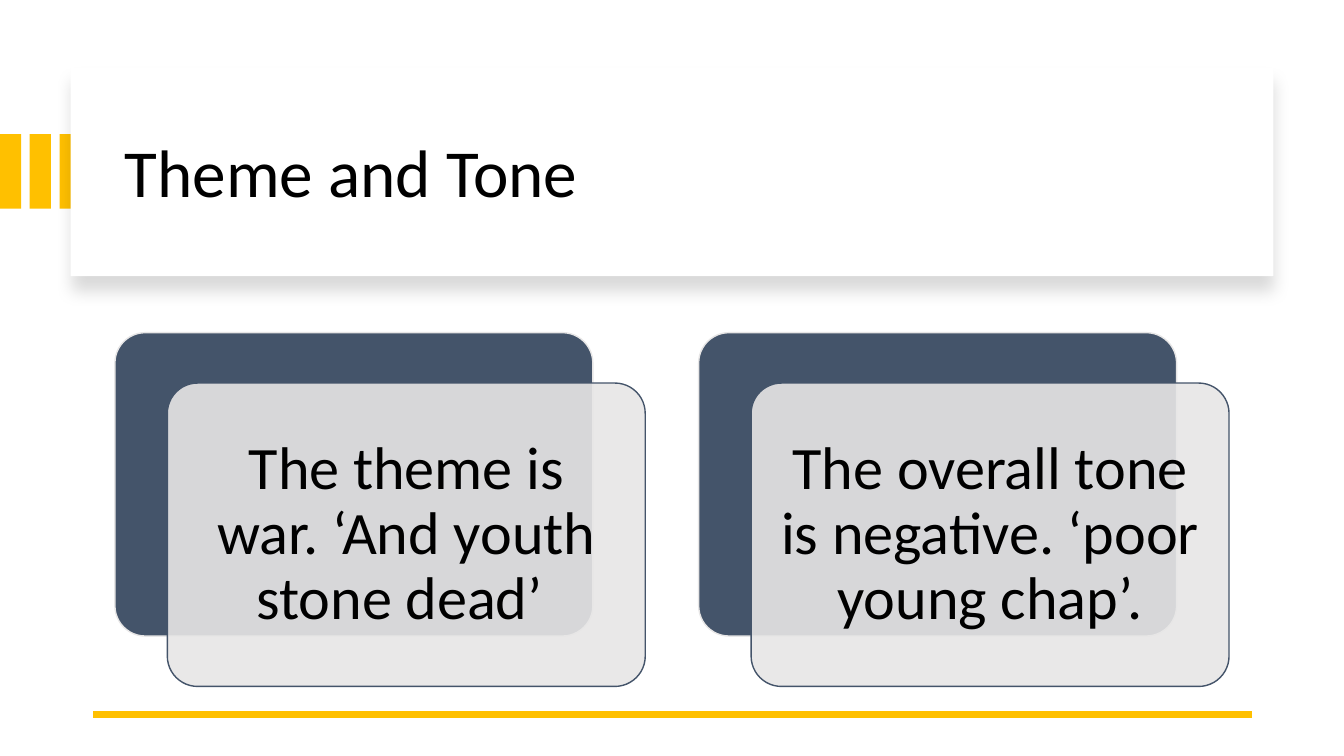
import dataclasses

import lxml.etree
import pptx
import pptx.dml.color
import pptx.enum.shapes
import pptx.enum.text
import pptx.oxml.ns
import pptx.util
from pptx.util import Inches

SHAPE = pptx.enum.shapes.MSO_SHAPE
ALIGN = pptx.enum.text.PP_ALIGN


@dataclasses.dataclass(frozen=True)
class Theme:
    font: str = "Calibri"
    title_size: int = 48
    card_size: int = 43
    ink: str = "000000"
    paper: str = "FFFFFF"
    accent: str = "FFC000"
    navy: str = "44546A"
    mist: str = "E7E6E6"


THEME = Theme()
CARD_TEXTS = [
    "The theme is war. ‘And youth stone dead’ ",
    "The overall tone is negative. ‘poor young chap’.",
]


def rgb(code):
    return pptx.dml.color.RGBColor.from_string(code)


def add_element(parent, tag, **attributes):
    return lxml.etree.SubElement(parent, pptx.oxml.ns.qn(tag), attributes)


def add_panel(shapes, kind, box, fill, outline=None):
    panel = shapes.add_shape(kind, *box)
    panel.fill.solid()
    panel.fill.fore_color.rgb = rgb(fill)
    if outline:
        panel.line.color.rgb = rgb(outline)
        panel.line.width = pptx.util.Pt(1)
    else:
        panel.line.fill.background()
    panel.shadow.inherit = False
    return panel


def add_text(shapes, box, text, size, align, inset):
    caption = shapes.add_textbox(*box)
    frame = caption.text_frame
    frame.word_wrap = True
    frame.vertical_anchor = pptx.enum.text.MSO_ANCHOR.MIDDLE
    frame.margin_left = frame.margin_right = inset
    frame.margin_top = frame.margin_bottom = min(inset, Inches(0.18))
    paragraph = frame.paragraphs[0]
    paragraph.alignment = align
    paragraph.line_spacing = 0.9
    run = paragraph.add_run()
    run.text = text
    run.font.name = THEME.font
    run.font.size = pptx.util.Pt(size)
    run.font.color.rgb = rgb(THEME.ink)


def add_stripes(slide, left, top, width, height):
    stripes = slide.shapes.add_group_shape().shapes
    stripe_width = Inches(0.21)
    pitch = (width - stripe_width) / 2
    for index in range(3):
        box = (left + round(index * pitch), top, stripe_width, height)
        add_panel(stripes, SHAPE.RECTANGLE, box, THEME.accent)


def add_banner(slide, left, top, width, height):
    banner = add_panel(slide.shapes, SHAPE.RECTANGLE, (left, top, width, height), THEME.paper)
    effects = banner._element.spPr.find(pptx.oxml.ns.qn("a:effectLst"))
    shadow = add_element(
        effects, "a:outerShdw", blurRad=str(pptx.util.Pt(11)), dist=str(pptx.util.Pt(10)),
        dir="5400000", algn="t", rotWithShape="0")
    color = add_element(shadow, "a:srgbClr", val=THEME.ink)
    add_element(color, "a:alpha", val="15000")
    title_box = (left + Inches(0.44), top + Inches(0.22), Inches(11.13), Inches(1.7))
    add_text(slide.shapes, title_box, "Theme and Tone", THEME.title_size, ALIGN.LEFT, Inches(0.1))


def add_footer_rule(slide, left, top, width):
    rule = slide.shapes.add_connector(
        pptx.enum.shapes.MSO_CONNECTOR.STRAIGHT, left + width, top, left, top)
    rule.line.color.rgb = rgb(THEME.accent)
    rule.line.width = pptx.util.Pt(4.5)
    add_element(rule._element.spPr, "a:effectLst")


def add_card(shapes, text, left, top, width, height):
    shift_x, shift_y, pad = Inches(0.52), Inches(0.5), Inches(0.09)
    panel_width, panel_height = width - shift_x, height - shift_y
    back = add_panel(shapes, SHAPE.ROUNDED_RECTANGLE, (left, top, panel_width, panel_height),
                     THEME.navy, THEME.mist)
    front_left, front_top = left + shift_x, top + shift_y
    front = add_panel(shapes, SHAPE.ROUNDED_RECTANGLE,
                      (front_left, front_top, panel_width, panel_height),
                      THEME.mist, THEME.navy)
    for panel in (back, front):
        panel.adjustments[0] = 0.1
    color = front._element.spPr.find(pptx.oxml.ns.qn("a:solidFill"))[0]
    add_element(color, "a:alpha", val="90000")
    text_box = (front_left + pad, front_top + pad, panel_width - 2 * pad, panel_height - 2 * pad)
    add_text(shapes, text_box, text, THEME.card_size, ALIGN.CENTER, Inches(0.18))


def add_cards(slide, left, top, width, height):
    cards = slide.shapes.add_group_shape().shapes
    card_width = Inches(5.26)
    pitch = (width - card_width) // (len(CARD_TEXTS) - 1)
    for index, text in enumerate(CARD_TEXTS):
        add_card(cards, text, left + index * pitch, top, card_width, height)


def main():
    deck = pptx.Presentation()
    deck.slide_width, deck.slide_height = Inches(13.33), Inches(7.5)
    slide = deck.slides.add_slide(deck.slide_layouts[6])
    slide.background.fill.solid()
    slide.background.fill.fore_color.rgb = rgb(THEME.paper)
    add_stripes(slide, Inches(0), Inches(1.33), Inches(0.8), Inches(0.74))
    add_banner(slide, Inches(0.7), Inches(0.67), Inches(11.93), Inches(2.07))
    add_footer_rule(slide, Inches(0.92), Inches(7.09), Inches(11.5))
    add_cards(slide, Inches(1.14), Inches(3.3), Inches(11.05), Inches(3.51))
    deck.save("out.pptx")


if __name__ == "__main__":
    main()
